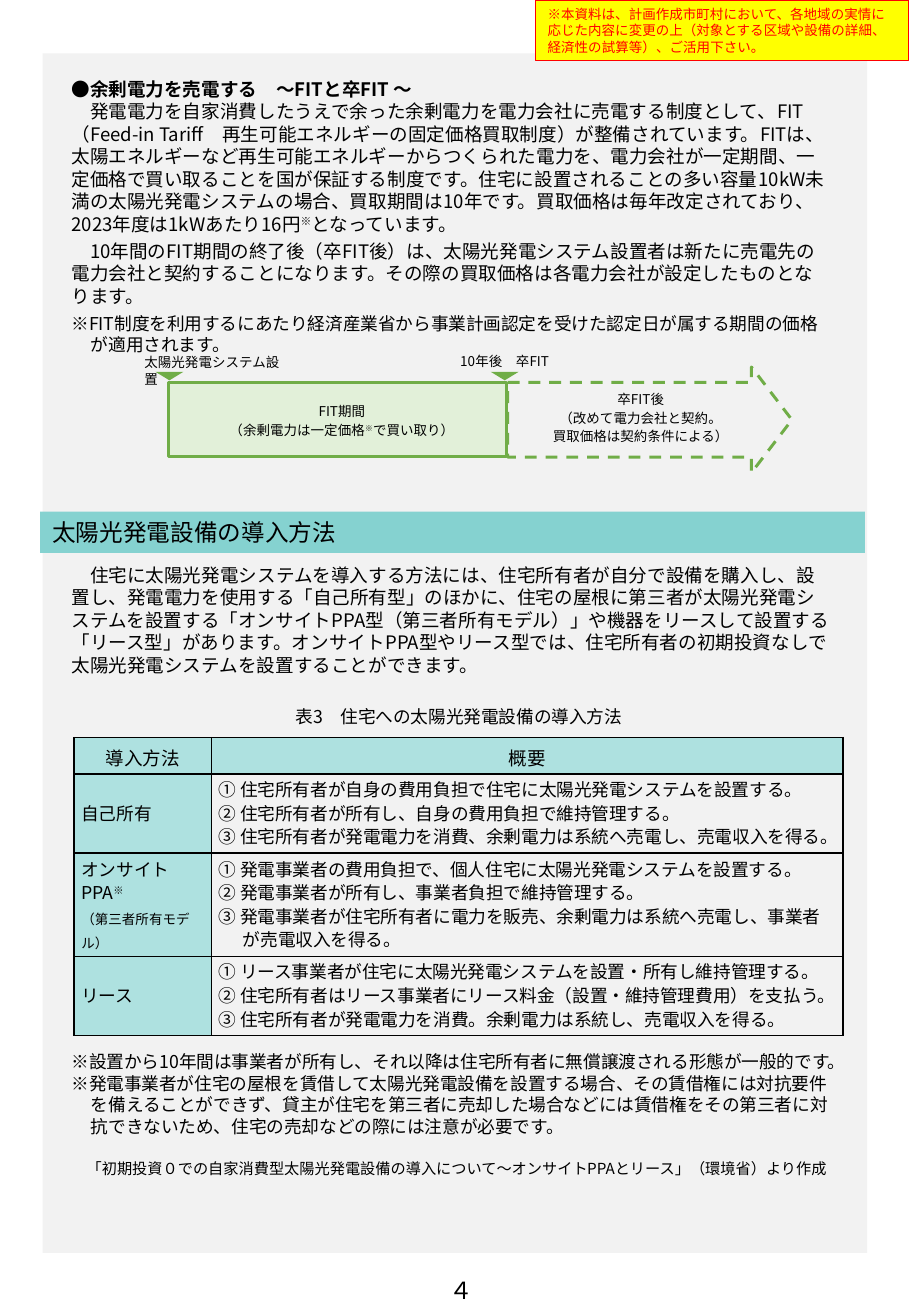
from lxml import etree
from pptx import Presentation
from pptx.dml.color import RGBColor
from pptx.enum.dml import MSO_LINE
from pptx.enum.shapes import MSO_SHAPE
from pptx.enum.text import MSO_ANCHOR, MSO_AUTO_SIZE, PP_ALIGN
from pptx.oxml.ns import qn
from pptx.util import Inches, Pt

LEFT, CENTER = PP_ALIGN.LEFT, PP_ALIGN.CENTER
TOP, MIDDLE = MSO_ANCHOR.TOP, MSO_ANCHOR.MIDDLE
RECTANGLE, ARROW, TRIANGLE = MSO_SHAPE.RECTANGLE, MSO_SHAPE.RIGHT_ARROW, MSO_SHAPE.ISOSCELES_TRIANGLE
DASH = MSO_LINE.DASH
FONT = "Noto Sans CJK JP"
LINE_RATIO = 1.21
COLORS = {"text": "000000", "panel": "F2F2F2", "green": "70AD47", "pale_green": "E2F0D9",
          "bar": "85D2D0", "head": "AEE1E0", "yellow": "FFFF00", "red": "FF0000"}

FIT_TEXT = [
    ("●余剰電力を売電する　～FITと卒FIT ～", {"bold": True}),
    ("　発電電力を自家消費したうえで余った余剰電力を電力会社に売電する制度として、FIT（Feed-in Tariff　再生可能エネルギーの固定価格買取制度）が整備されています。FITは、太陽エネルギーなど再生可能エネルギーからつくられた電力を、電力会社が一定期間、一定価格で買い取ることを国が保証する制度です。住宅に設置されることの多い容量10kW未満の太陽光発電システムの場合、買取期間は10年です。買取価格は毎年改定されており、2023年度は1kWあたり16円^※^となっています。", {"after": 3}),
    ("　10年間のFIT期間の終了後（卒FIT後）は、太陽光発電システム設置者は新たに売電先の電力会社と契約することになります。その際の買取価格は各電力会社が設定したものとなります。", {"after": 3}),
    ("※FIT制度を利用するにあたり経済産業省から事業計画認定を受けた認定日が属する期間の価格が適用されます。", {"size": 10.5, "hang": 0.16}),
]
METHOD_TEXT = "　住宅に太陽光発電システムを導入する方法には、住宅所有者が自分で設備を購入し、設置し、発電電力を使用する「自己所有型」のほかに、住宅の屋根に第三者が太陽光発電システムを設置する「オンサイトPPA型（第三者所有モデル）」や機器をリースして設置する「リース型」があります。オンサイトPPA型やリース型では、住宅所有者の初期投資なしで太陽光発電システムを設置することができます。"
METHOD_ROWS = [
    (0.65, [("自己所有", {})], [
        "① 住宅所有者が自身の費用負担で住宅に太陽光発電システムを設置する。",
        "② 住宅所有者が所有し、自身の費用負担で維持管理する。",
        "③ 住宅所有者が発電電力を消費、余剰電力は系統へ売電し、売電収入を得る。"]),
    (0.85, [("オンサイト", {}), ("PPA^※", {}), ("（第三者所有モデル）", {"size": 8})], [
        "① 発電事業者の費用負担で、個人住宅に太陽光発電システムを設置する。",
        "② 発電事業者が所有し、事業者負担で維持管理する。",
        "③ 発電事業者が住宅所有者に電力を販売、余剰電力は系統へ売電し、事業者が売電収入を得る。"]),
    (0.65, [("リース", {})], [
        "① リース事業者が住宅に太陽光発電システムを設置・所有し維持管理する。",
        "② 住宅所有者はリース事業者にリース料金（設置・維持管理費用）を支払う。",
        "③ 住宅所有者が発電電力を消費。余剰電力は系統し、売電収入を得る。"]),
]
NOTES = [
    ("※設置から10年間は事業者が所有し、それ以降は住宅所有者に無償譲渡される形態が一般的です。", {"hang": 0.16}),
    ("※発電事業者が住宅の屋根を賃借して太陽光発電設備を設置する場合、その賃借権には対抗要件を備えることができず、貸主が住宅を第三者に売却した場合などには賃借権をその第三者に対抗できないため、住宅の売却などの際には注意が必要です。", {"hang": 0.16}),
    ("　「初期投資０での自家消費型太陽光発電設備の導入について～オンサイトPPAとリース」（環境省）より作成", {"size": 9, "before": 13}),
]


def rgb(name):
    return RGBColor.from_string(COLORS[name])


def add_runs(paragraph, text, size, color, bold):
    """Every second part between ^ marks is superscript."""
    for index, part in enumerate(text.split("^")):
        if not part:
            continue
        run = paragraph.add_run()
        run.text = part
        for name, value in {"size": Pt(size), "bold": bold, "name": FONT}.items():
            setattr(run.font, name, value)
        run.font.color.rgb = rgb(color)
        properties = run.font._element
        etree.SubElement(properties, qn("a:ea"), typeface=FONT)
        if index % 2:
            properties.set("baseline", "30000")


def write(frame, items, size, align=LEFT, line=None, color="text"):
    """Fill a text frame with (text, overrides) pairs."""
    frame.word_wrap = True
    for index, (text, extra) in enumerate(items):
        paragraph = frame.paragraphs[0] if index == 0 else frame.add_paragraph()
        text_size = extra.get("size", size)
        values = {"alignment": align, "space_before": Pt(extra.get("before", 0)),
                  "space_after": Pt(extra.get("after", 0)),
                  "line_spacing": Pt(line or round(text_size * LINE_RATIO, 1))}
        for name, value in values.items():
            setattr(paragraph, name, value)
        if "hang" in extra:
            indent = Inches(extra["hang"])
            properties = paragraph._p.get_or_add_pPr()
            properties.set("marL", str(indent))
            properties.set("indent", str(-indent))
        add_runs(paragraph, text, text_size, color, extra.get("bold", False))


def plain(*lines):
    return [(line, {}) for line in lines]


def add_text(slide, box, items, size, **options):
    shape = slide.shapes.add_textbox(*map(Inches, box))
    write(shape.text_frame, items, size, **options)


def add_block(slide, kind, box, fill=None, line=None, width=1.75):
    shape = slide.shapes.add_shape(kind, *map(Inches, box))
    shape.shadow.inherit = False
    if fill:
        shape.fill.solid()
        shape.fill.fore_color.rgb = rgb(fill)
    else:
        shape.fill.background()
    if line:
        shape.line.color.rgb = rgb(line)
        shape.line.width = Pt(width)
    else:
        shape.line.fill.background()
    return shape


def add_title_bar(slide, box):
    title = slide.shapes.title
    for name, value in zip(("left", "top", "width", "height"), box):
        setattr(title, name, Inches(value))
    title.fill.solid()
    title.fill.fore_color.rgb = rgb("bar")
    title.text_frame.auto_size = MSO_AUTO_SIZE.NONE
    title.text_frame.vertical_anchor = MIDDLE
    write(title.text_frame, plain("太陽光発電設備の導入方法"), 14)
    slide.shapes._spTree.append(title._element)


def add_fit_timeline(slide, left, top):
    """Ten-year period followed by the open-ended arrow."""
    period = 2.78
    add_block(slide, RECTANGLE, (left, top, period, 0.61), "pale_green", "green")
    arrow = add_block(slide, ARROW, (left + period + 0.01, top - 0.13, 2.34, 0.87), line="green")
    arrow.line.dash_style = DASH
    arrow.adjustments[0], arrow.adjustments[1] = 0.707, 0.383
    for moment in (left, left + period - 0.02):
        marker = add_block(slide, TRIANGLE, (moment - 0.11, top - 0.09, 0.23, 0.07), "green")
        marker.rotation = 180
    add_text(slide, (left - 0.3, top - 0.29, 1.42, 0.2), plain("太陽光発電システム設置"), 8, line=10)
    add_text(slide, (left + 2.18, top - 0.3, 1.17, 0.21), plain("10年後　卒FIT"), 8, align=CENTER, line=10)
    add_text(slide, (left + 0.28, top + 0.1, 2.29, 0.37),
             plain("FIT期間", "（余剰電力は一定価格^※^で買い取り）"), 8, align=CENTER, line=11)
    add_text(slide, (left + 2.83, top, 2.11, 0.56),
             plain("卒FIT後", "（改めて電力会社と契約。", "買取価格は契約条件による）"), 8, align=CENTER, line=11)


def format_cell(cell, items, size, line, align=LEFT, anchor=MIDDLE, fill=None):
    margins = {"margin_left": 0.06, "margin_right": 0.06, "margin_top": 0.02, "margin_bottom": 0.02}
    for name, value in margins.items():
        setattr(cell, name, Inches(value))
    cell.vertical_anchor = anchor
    write(cell.text_frame, items, size, align=align, line=line)
    properties = cell._tc.get_or_add_tcPr()
    for side in ("a:lnL", "a:lnR", "a:lnT", "a:lnB"):
        border = etree.SubElement(properties, qn(side), w=str(Pt(1)))
        solid = etree.SubElement(border, qn("a:solidFill"))
        etree.SubElement(solid, qn("a:srgbClr"), val=COLORS["text"])
    if fill:
        cell.fill.solid()
        cell.fill.fore_color.rgb = rgb(fill)
    else:
        cell.fill.background()


def add_method_table(slide, box):
    table = slide.shapes.add_table(len(METHOD_ROWS) + 1, 2, *map(Inches, box)).table
    table.first_row = table.horz_banding = False
    for column, width in zip(table.columns, (1.13, box[2] - 1.13)):
        column.width = Inches(width)
    table.rows[0].height = Inches(0.3)
    for index, heading in enumerate(("導入方法", "概要")):
        format_cell(table.cell(0, index), plain(heading), 11, 18, CENTER, TOP, "head")
    for index, (height, method, points) in enumerate(METHOD_ROWS, 1):
        table.rows[index].height = Inches(height)
        format_cell(table.cell(index, 0), method, 10.5, 14, fill="head")
        format_cell(table.cell(index, 1), [(point, {"hang": 0.2}) for point in points], 10.5, 14)


def add_usage_notice(slide, box):
    notice = add_block(slide, RECTANGLE, box, "yellow", "red", 0.75)
    notice.text_frame.vertical_anchor = MIDDLE
    write(notice.text_frame, plain("※本資料は、計画作成市町村において、各地域の実情に応じた内容に変更の上（対象とする区域や設備の詳細、経済性の試算等）、ご活用下さい。"), 8, color="red")


def main():
    presentation = Presentation()
    presentation.slide_width, presentation.slide_height = Inches(7.5), Inches(10.83)
    slide = presentation.slides.add_slide(presentation.slide_layouts[5])
    add_block(slide, RECTANGLE, (0.35, 0.44, 6.79, 9.87), "panel")
    add_text(slide, (0.49, 0.59, 6.46, 2.22), FIT_TEXT, 11)
    add_fit_timeline(slide, 1.39, 3.15)
    add_title_bar(slide, (0.33, 4.21, 6.79, 0.34))
    add_text(slide, (0.49, 4.59, 6.46, 1.05), plain(METHOD_TEXT), 11)
    add_text(slide, (0.55, 5.76, 6.46, 0.28), plain("表3　住宅への太陽光発電設備の導入方法"), 10.5, align=CENTER)
    add_method_table(slide, (0.61, 6.07, 6.33, 2.45))
    add_text(slide, (0.49, 8.6, 6.46, 1.45), NOTES, 10.5)
    add_text(slide, (0.6 + 3, 10.45, 0.35, 0.34), plain("４"), 14, align=CENTER)
    add_usage_notice(slide, (4.41, 0, 3.07, 0.5))
    presentation.save("out.pptx")


if __name__ == "__main__":
    main()
